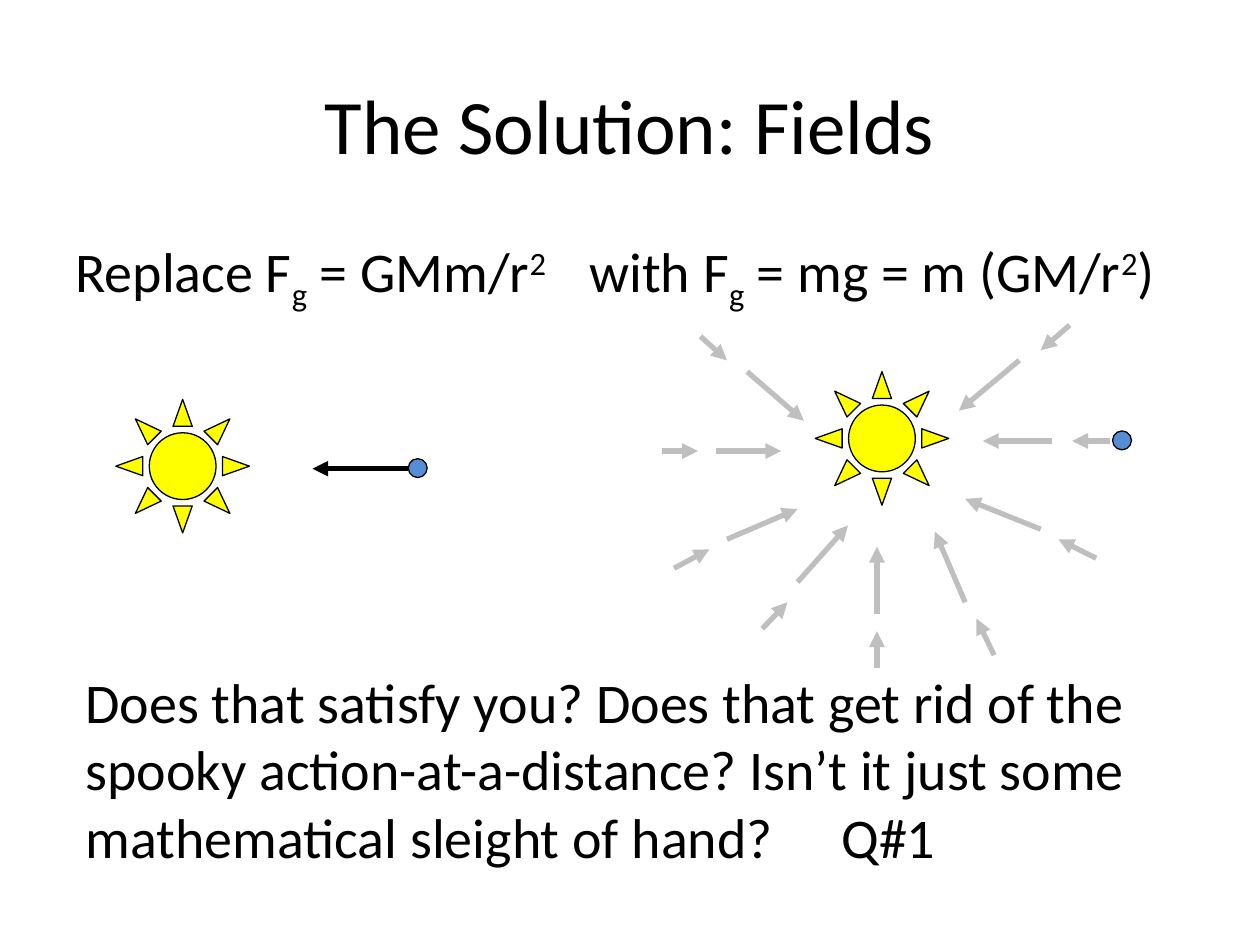
"""Build a slide on gravity as a field, with arrows around a sun."""
import pptx
import pptx.util
import pptx.dml.color
import pptx.enum.shapes
import pptx.enum.text
import lxml.etree
import pptx.oxml.ns

PX = 9144
FONT = "Calibri"
HUES = {"ink": "000000", "sun": "FFFF00", "dot": "558ED5", "field": "BFBFBF"}
SUB, SUP = -25, 30
SUN, DOT = 106, 15

TITLE = [("The Solution: Fields", 0)]
ASK = [("Does that satisfy you? Does that get rid of the spooky "
        "action-at-a-distance? Isn’t it just some mathematical sleight "
        "of hand?\t\tQ#1", 0)]
FIELD = [("with F", 0), ("g", SUB), (" = mg = m (GM/r", 0), ("2", SUP), (")", 0)]
FORCE = [("Replace F", 0), ("g", SUB), (" = GMm/r", 0), ("2", SUP)]

TEXTS = [
    (TITLE, (50, 30, 900, 137), 44, "title"),
    (ASK, (58, 525, 900, 183), 32, "plain"),
    (FIELD, (458, 183, 483, 83), 32, "hang"),
    (FORCE, (50, 183, 400, 92), 32, "hang"),
]

RAYS = [
    (849, 258, 826, 278), (881, 350, 851, 350), (870, 443, 840, 428),
    (809, 286, 761, 326), (835, 350, 780, 350), (826, 420, 766, 396),
    (556, 267, 577, 286), (525, 358, 554, 358), (535, 451, 563, 436),
    (593, 295, 638, 334), (568, 358, 620, 358), (577, 428, 633, 404),
    (605, 499, 625, 478), (696, 530, 696, 501), (789, 520, 775, 491),
    (633, 462, 673, 417), (696, 487, 696, 434), (766, 478, 742, 422),
]
PULL = (324, 372, 248, 372)


def color(name):
    return pptx.dml.color.RGBColor.from_string(HUES[name])


def add_arrow(slide, ends, hue):
    kind = pptx.enum.shapes.MSO_CONNECTOR.STRAIGHT
    arrow = slide.shapes.add_connector(kind, *(n * PX for n in ends))
    arrow.line.color.rgb = color(hue)
    arrow.line.width = pptx.util.Pt(3)
    qn = pptx.oxml.ns.qn
    tip = lxml.etree.SubElement(arrow.line._get_or_add_ln(), qn("a:tailEnd"))
    tip.set("type", "triangle")
    lxml.etree.SubElement(arrow._element.spPr, qn("a:effectLst"))


def add_body(slide, kind, left, top, size, hue):
    box = (n * PX for n in (left, top, size, size))
    body = slide.shapes.add_shape(kind, *box)
    body.shadow.inherit = False
    body.fill.solid()
    body.fill.fore_color.rgb = color(hue)
    body.line.color.rgb = color("ink")
    body.line.width = pptx.util.Pt(0.75)


def add_text(slide, runs, box, size, style):
    frame = slide.shapes.add_textbox(*(n * PX for n in box)).text_frame
    frame.word_wrap = True
    para = frame.paragraphs[0]
    if style == "title":
        frame.vertical_anchor = pptx.enum.text.MSO_ANCHOR.MIDDLE
        para.alignment = pptx.enum.text.PP_ALIGN.CENTER
    elif style == "hang":
        para.space_before = pptx.util.Pt(size * 0.2)
        props = para._p.get_or_add_pPr()
        props.set("marL", str(38 * PX))
        props.set("indent", str(-38 * PX))
    for words, shift in runs:
        run = para.add_run()
        run.text = words
        run.font.name = FONT
        run.font.size = pptx.util.Pt(size)
        run.font.color.rgb = color("ink")
        if shift:
            run.font._element.set("baseline", str(shift * 1000))


def main():
    deck = pptx.Presentation()
    deck.slide_width, deck.slide_height = 1000 * PX, 750 * PX
    slide = deck.slides.add_slide(deck.slide_layouts[6])
    shape = pptx.enum.shapes.MSO_SHAPE
    for ray in RAYS:
        add_arrow(slide, ray, "field")
    for sun, dot in [((647, 295), (883, 342)), ((92, 317), (324, 364))]:
        add_body(slide, shape.SUN, *sun, SUN, "sun")
        add_body(slide, shape.OVAL, *dot, DOT, "dot")
    add_arrow(slide, PULL, "ink")
    for item in TEXTS:
        add_text(slide, *item)
    deck.save("out.pptx")


if __name__ == "__main__":
    main()
